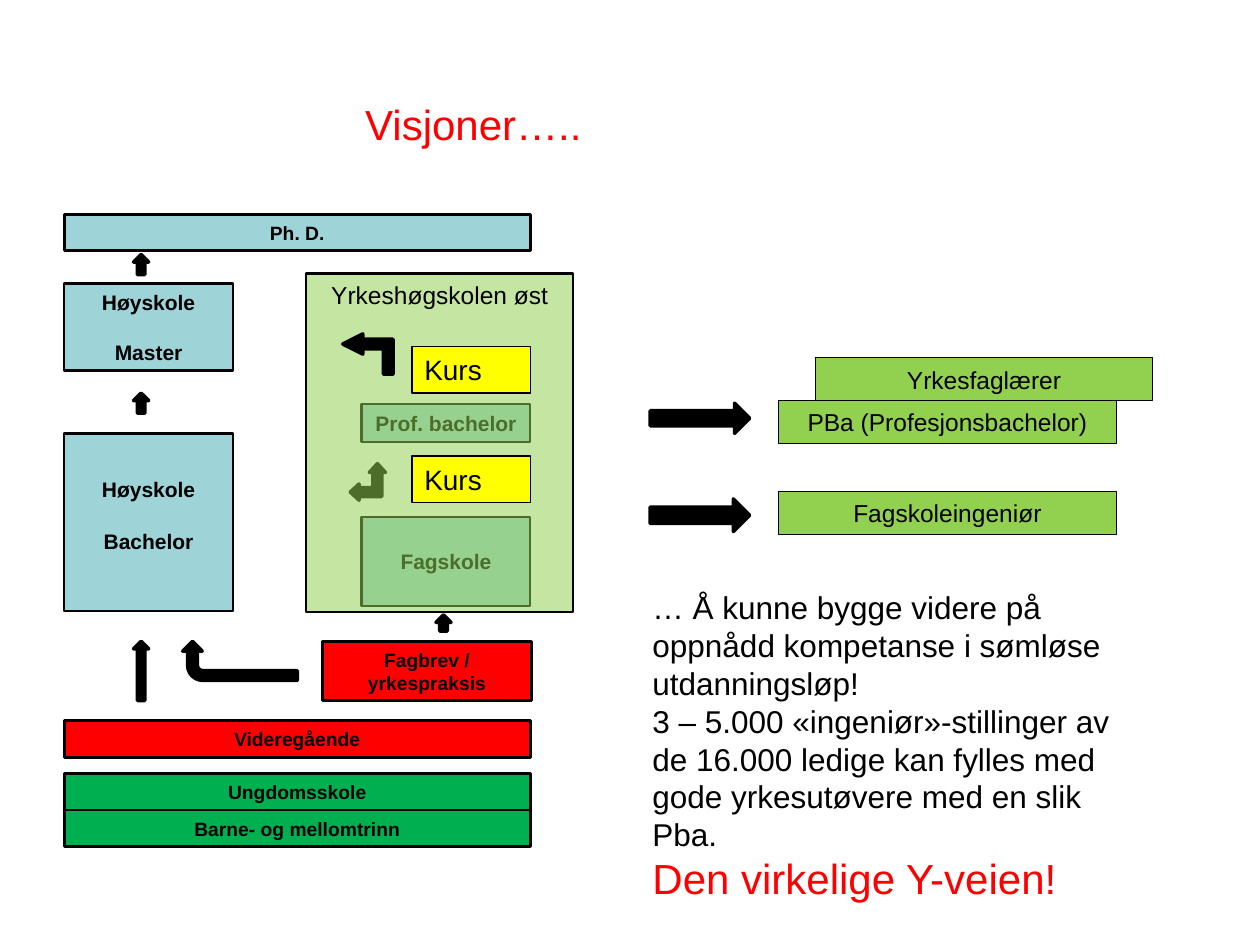
"""Build the slide on a Y-shaped path through vocational education."""
from lxml import etree
from pptx import Presentation
from pptx.dml.color import RGBColor
from pptx.enum.shapes import MSO_SHAPE
from pptx.enum.text import MSO_ANCHOR, PP_ALIGN
from pptx.oxml.ns import qn
from pptx.util import Inches, Pt

RECT = MSO_SHAPE.RECTANGLE
UP = MSO_SHAPE.UP_ARROW
RIGHT = MSO_SHAPE.RIGHT_ARROW
BENT = MSO_SHAPE.BENT_ARROW
FORK = MSO_SHAPE.LEFT_UP_ARROW
TURN = MSO_SHAPE.BENT_UP_ARROW
TOP, MID = MSO_ANCHOR.TOP, MSO_ANCHOR.MIDDLE
LEFT, MIDST = PP_ALIGN.LEFT, PP_ALIGN.CENTER

theme = {
    "font": "Arial", "ink": "000000", "red": "FF0000", "green": "00B050",
    "blue": "9ED3D7", "lime": "92D050", "gold": "FFFF00",
    "tiny": 11, "small": 12, "mid": 14, "note": 16, "body": 18, "head": 24,
}

deck = Presentation()
deck.slide_width, deck.slide_height = Inches(10), Inches(7.5)
slide = deck.slides.add_slide(deck.slide_layouts[6])
cell = deck.slide_width / 100


def write(shape, lines, align, anchor, gap=0):
    frame = shape.text_frame
    frame.word_wrap = True
    frame.vertical_anchor = anchor
    for i, (text, size, tint, bold) in enumerate(lines):
        para = frame.paragraphs[0] if i == 0 else frame.add_paragraph()
        para.alignment = align
        if i:
            para.space_before = Pt(gap)
        run = para.add_run()
        run.text = text
        run.font.name = theme["font"]
        run.font.size = Pt(theme[size])
        run.font.bold = bold
        run.font.color.rgb = RGBColor.from_string(theme[tint])
    return frame


def draw(kind, spot, fill, line):
    shape = slide.shapes.add_shape(kind, *[round(n * cell) for n in spot])
    shape.shadow.inherit = False
    shape.fill.solid()
    shape.fill.fore_color.rgb = RGBColor.from_string(theme[fill])
    shape.line.color.rgb = RGBColor.from_string(theme["ink"])
    shape.line.width = Pt(line)
    return shape


edge, wide, slim = 5.1, 37, 13.4
inner = edge + wide - slim

bars = [
    (64.3, "green", "Barne- og mellomtrinn"),
    (61.4, "green", "Ungdomsskole"),
    (57.2, "red", "Videregående"),
    (17, "blue", "Ph. D."),
]
for row, fill, text in bars:
    bar = draw(RECT, (edge, row, wide, 2.9), fill, 1.5)
    write(bar, [(text, "tiny", "ink", True)], MIDST, MID)

steps = [
    (edge, 34.4, slim, 14.1, "blue", 1.25, "small", ["Høyskole", "Bachelor"], 15),
    (edge, 22.5, slim, 6.9, "blue", 1.25, "small", ["Høyskole", "Master"], 14),
    (25.6, 50.9, 16.6, 4.7, "red", 1.5, "tiny", ["Fagbrev / yrkespraksis"], 0),
    (inner, 41, slim, 7.1, "blue", 1.25, "small", ["Fagskole"], 0),
    (inner, 32.1, slim, 3, "blue", 1.25, "small", ["Prof. bachelor"], 0),
]
for *spot, fill, line, size, names, gap in steps:
    step = draw(RECT, spot, fill, line)
    lines = [(name, size, "ink", True) for name in names]
    frame = write(step, lines, MIDST, MID, gap)
    if "Bachelor" in names:
        frame.margin_bottom = Inches(0.16)

arrows = [
    (UP, 10.6, 50.9, 1.2, 4.7, 0, []),
    (UP, 10.6, 20.2, 1.2, 1.6, 0, []),
    (UP, 10.6, 31.2, 1.2, 1.6, 0, []),
    (UP, 34.6, 48.8, 1.2, 1.3, 0, []),
    (BENT, 17.5, 47.9, 3.1, 9.1, 270, [0.25, 0.25, 0.25, 0.39]),
    (FORK, 27.8, 36.8, 2.8, 2.9, 0, [0.25, 0.23, 0.25]),
    (RIGHT, 51.6, 39.6, 7.9, 2.6, 0, []),
    (RIGHT, 51.6, 32, 7.9, 2.4, 0, []),
]
for kind, *spot, turn, bends in arrows:
    arrow = draw(kind, spot, "ink", 2)
    arrow.rotation = turn
    for i, bend in enumerate(bends):
        arrow.adjustments[i] = bend

goals = [
    (61.8, 39, "Fagskoleingeniør"),
    (61.8, 31.8, "PBa (Profesjonsbachelor)"),
    (64.7, 28.4, "Yrkesfaglærer"),
]
for col, row, text in goals:
    goal = draw(RECT, (col, row, 26.8, 3.4), "lime", 0.75)
    write(goal, [(text, "mid", "ink", False)], MIDST, MID)

panel = draw(RECT, (24.3, 21.7, 21.2, 26.9), "lime", 1.25)
tint = panel.fill._xPr.find(qn("a:solidFill"))[0]
etree.SubElement(tint, qn("a:alpha")).set("val", "53000")
write(panel, [("Yrkeshøgskolen øst", "mid", "ink", False)], MIDST, TOP)

for row in (36.2, 27.5):
    course = draw(RECT, (32.7, row, 9.4, 3.7), "gold", 0.75)
    write(course, [("Kurs", "note", "ink", False)], LEFT, MID)

back = draw(TURN, (27.6, 26.1, 3.2, 4), "ink", 2)
back.rotation = 270
for i, bend in enumerate([0.24, 0.25, 0.5]):
    back.adjustments[i] = bend

notes = [
    ((28, 7.3, 26.8, 5.1), [("Visjoner…..", "head", "red", False)]),
    ((50.8, 46.2, 41.7, 23.2), [
        ("… Å kunne bygge videre på oppnådd kompetanse i sømløse "
         "utdanningsløp!", "body", "ink", False),
        ("3 – 5.000 «ingeniør»-stillinger av de 16.000 ledige kan fylles "
         "med gode yrkesutøvere med en slik Pba.", "body", "ink", False),
        ("Den virkelige Y-veien!", "head", "red", False),
    ]),
]
for spot, lines in notes:
    note = slide.shapes.add_textbox(*[round(n * cell) for n in spot])
    write(note, lines, LEFT, TOP)

deck.save("out.pptx")
